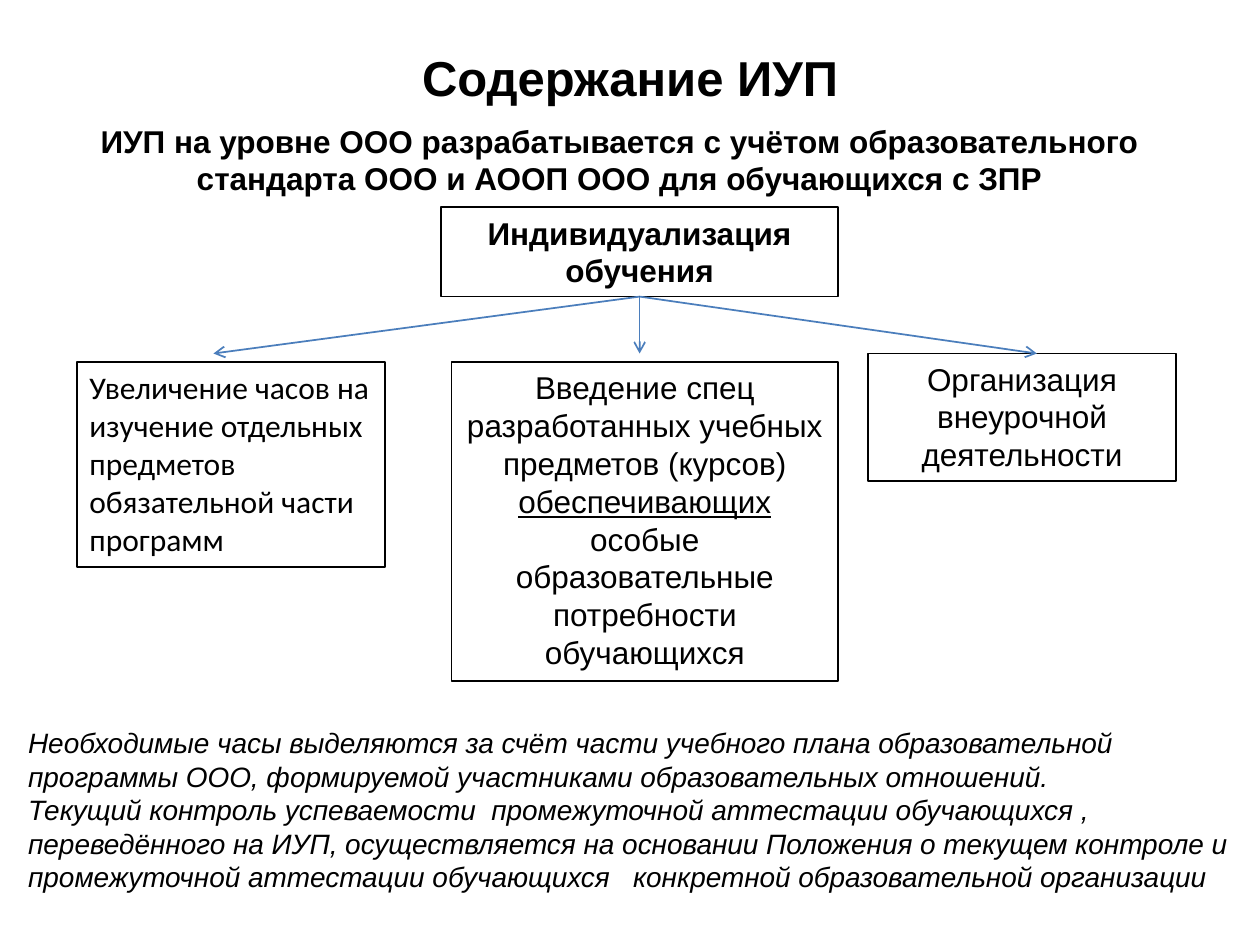
import pptx
import pptx.util
import pptx.dml.color
import pptx.enum.shapes
import pptx.enum.text
import pptx.oxml
import pptx.oxml.ns

Pt = pptx.util.Pt
ALIGN = pptx.enum.text.PP_ALIGN
ANCHOR = pptx.enum.text.MSO_ANCHOR
COLORS = {"text": "000000", "line": "000000", "arrow": "4B7EBC", "back": "FFFFFF"}


def rgb(name):
    return pptx.dml.color.RGBColor.from_string(COLORS[name])


def add_text(p, text, size=18, font="Arial", bold=False, italic=False, underline=False):
    """Append one formatted run to a paragraph."""
    r = p.add_run()
    r.text = text
    f = r.font
    f.name, f.size = font, Pt(size)
    f.bold, f.italic, f.underline = bold, italic, underline
    f.color.rgb = rgb("text")


class SlideBuilder:
    """Holds the style and the current slide."""

    def __init__(self, prs):
        self.s = prs.slides.add_slide(prs.slide_layouts[5])
        self.line_width = Pt(1)

    def fill_frame(self, tf, paragraphs, align, anchor=ANCHOR.TOP, **fmt):
        """Write paragraphs, each a list of (text, extra format) runs."""
        tf.word_wrap = True
        tf.vertical_anchor = anchor
        for i, runs in enumerate(paragraphs):
            p = tf.paragraphs[0] if i == 0 else tf.add_paragraph()
            p.alignment = align
            for text, extra in runs:
                add_text(p, text, **{**fmt, **extra})

    def title(self, text, left, top, width, height):
        sp = self.s.shapes.title
        sp.left, sp.top, sp.width, sp.height = map(Pt, (left, top, width, height))
        self.fill_frame(sp.text_frame, [[(text, {})]], ALIGN.CENTER,
                        ANCHOR.MIDDLE, size=28, bold=True)

    def text(self, paragraphs, left, top, width, height, align=ALIGN.LEFT, **fmt):
        sp = self.s.shapes.add_textbox(*map(Pt, (left, top, width, height)))
        self.fill_frame(sp.text_frame, [[(t, {})] for t in paragraphs], align, **fmt)

    def box(self, runs, left, top, width, height, align=ALIGN.CENTER, **fmt):
        sp = self.s.shapes.add_shape(pptx.enum.shapes.MSO_SHAPE.RECTANGLE,
                                     *map(Pt, (left, top, width, height)))
        sp.shadow.inherit = False
        sp.fill.background()
        sp.line.color.rgb = rgb("line")
        sp.line.width = self.line_width
        self.fill_frame(sp.text_frame, [runs], align, **fmt)
        return sp

    def arrow(self, source, x, y):
        """Arrow from the bottom middle of a box to a point."""
        c = self.s.shapes.add_connector(pptx.enum.shapes.MSO_CONNECTOR.STRAIGHT,
                                        0, 0, Pt(x), Pt(y))
        c.begin_connect(source, 2)
        c.line.color.rgb = rgb("arrow")
        c.line.width = self.line_width
        ns = pptx.oxml.ns.nsdecls("a")
        c.line._get_or_add_ln().append(
            pptx.oxml.parse_xml(f'<a:tailEnd {ns} type="arrow"/>'))
        c._element.spPr.append(pptx.oxml.parse_xml(f"<a:effectLst {ns}/>"))


def main():
    prs = pptx.Presentation()
    prs.slide_width, prs.slide_height = Pt(720), Pt(540)
    b = SlideBuilder(prs)
    b.s.background.fill.solid()
    b.s.background.fill.fore_color.rgb = rgb("back")

    # Title and subtitle
    b.title("Содержание ИУП", 36, 22, 648, 44)
    b.text(["ИУП на уровне ООО разрабатывается с учётом образовательного "
            "стандарта ООО и АООП ООО для обучающихся с ЗПР"],
           25.5, 66, 657, 51, ALIGN.CENTER, bold=True)

    # Root box
    root = b.box([("Индивидуализация обучения", {})], 252, 118.5, 227, 51, bold=True)

    # Three directions
    b.box([("Увеличение часов на изучение отдельных предметов "
            "обязательной части программ", {})],
          44, 207, 176, 117, ALIGN.LEFT, font="Calibri")
    b.box([("Введение спец разработанных учебных предметов (курсов) ", {}),
           ("обеспечивающих ", {"underline": True}),
           ("особые образовательные потребности обучающихся", {})],
          258, 207, 221, 182)
    b.box([("Организация внеурочной деятельности", {})], 496, 202, 176, 73)

    # Closing remarks
    b.text(["Необходимые часы выделяются за счёт части учебного плана образовательной "
            "программы ООО, формируемой участниками образовательных отношений.",
            "Текущий контроль успеваемости  промежуточной аттестации обучающихся , "
            "переведённого на ИУП, осуществляется на основании Положения о текущем "
            "контроле и промежуточной аттестации обучающихся   конкретной "
            "образовательной организации"],
           9, 411, 708.5, 126, size=16, italic=True)

    # Arrows from the root box
    for x in (365.5, 122, 592.5):
        b.arrow(root, x, 202)

    prs.save("out.pptx")


if __name__ == "__main__":
    main()
